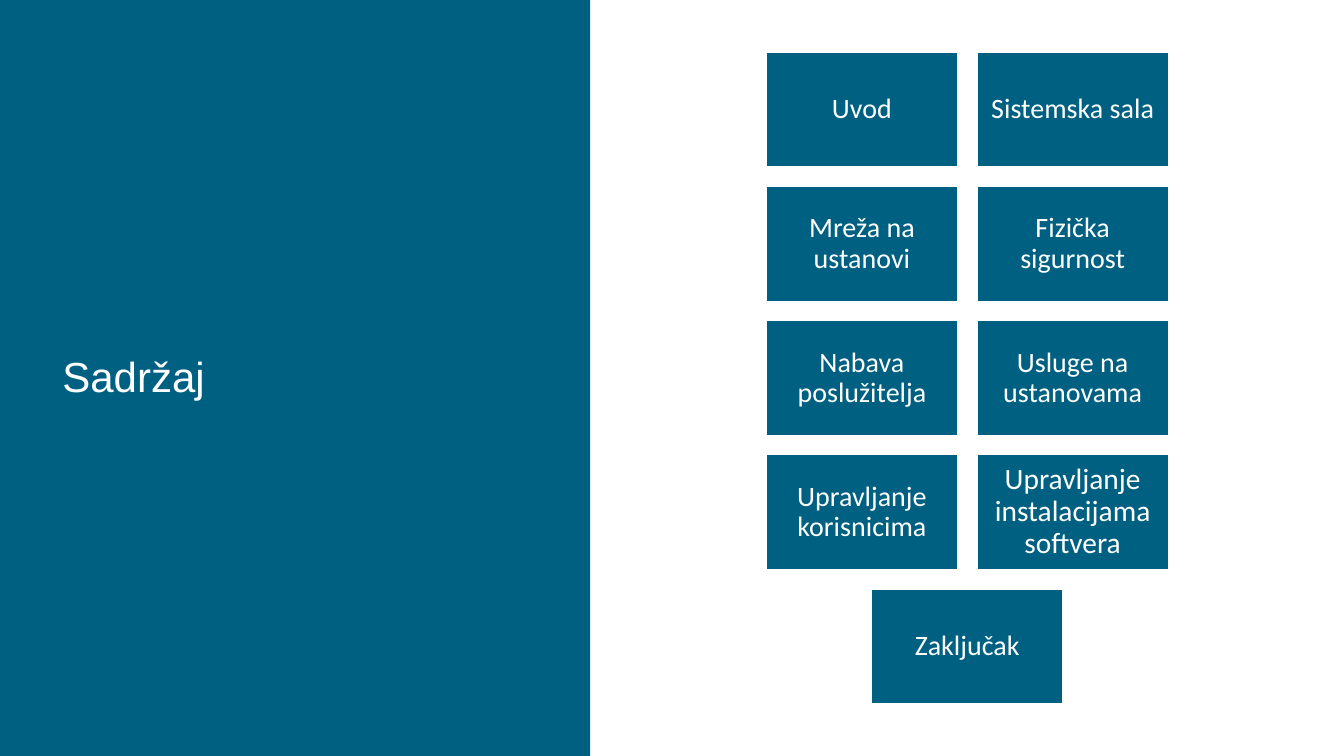
from pptx import Presentation
from pptx.dml.color import RGBColor
from pptx.enum.shapes import MSO_SHAPE
from pptx.enum.text import MSO_ANCHOR, PP_ALIGN
from pptx.util import Pt

TEAL, WHITE = "006081", "FEFFFE"


def paint(fill, color):
    fill.solid()
    fill.fore_color.rgb = RGBColor.from_string(color)


def write(shape, text, font, size, align, side, edge):
    frame = shape.text_frame
    frame.word_wrap = True
    frame.vertical_anchor = MSO_ANCHOR.MIDDLE
    frame.margin_left = frame.margin_right = Pt(side)
    frame.margin_top = frame.margin_bottom = Pt(edge)
    para = frame.paragraphs[0]
    para.text = text
    para.alignment = align
    para.line_spacing = 0.9
    para.font.name = font
    para.font.size = Pt(size)
    para.font.color.rgb = RGBColor.from_string(WHITE)


deck = Presentation()
deck.slide_width, deck.slide_height = Pt(960), Pt(540)
slide = deck.slides.add_slide(deck.slide_layouts[6])
paint(slide.background.fill, WHITE)
shapes = slide.shapes

# Left panel
panel = shapes.add_shape(MSO_SHAPE.RECTANGLE, 0, 0, Pt(421.5), Pt(540))
panel.shadow.inherit = False
paint(panel.fill, TEAL)
panel.line.fill.background()

# Title
title = shapes.add_textbox(Pt(37.5), Pt(132.5), Pt(344), Pt(277))
write(title, "Sadržaj", "Arial", 30, PP_ALIGN.LEFT, 7.2, 3.6)

# Topic tiles: two columns, the last tile centred below
topics = [
    "Uvod", "Sistemska sala",
    "Mreža na ustanovi", "Fizička sigurnost",
    "Nabava poslužitelja", "Usluge na ustanovama",
    "Upravljanje korisnicima", "Upravljanje instalacijama softvera",
    "Zaključak",
]
left, top, width, height = 547.3, 37.4, 136.8, 82.1
gap = 13.7
for i, topic in enumerate(topics):
    row, col = divmod(i, 2)
    if i == len(topics) - 1:
        col = 0.5
    tile = shapes.add_shape(
        MSO_SHAPE.RECTANGLE,
        Pt(left + col * (width + gap)), Pt(top + row * (height + gap)),
        Pt(width), Pt(height))
    tile.shadow.inherit = False
    paint(tile.fill, TEAL)
    paint(tile.line.fill, WHITE)
    tile.line.width = Pt(1)
    size = 21 if "softvera" in topic else 20
    write(tile, topic, "Calibri", size, PP_ALIGN.CENTER, 5.8, 5.8)

deck.save("out.pptx")
